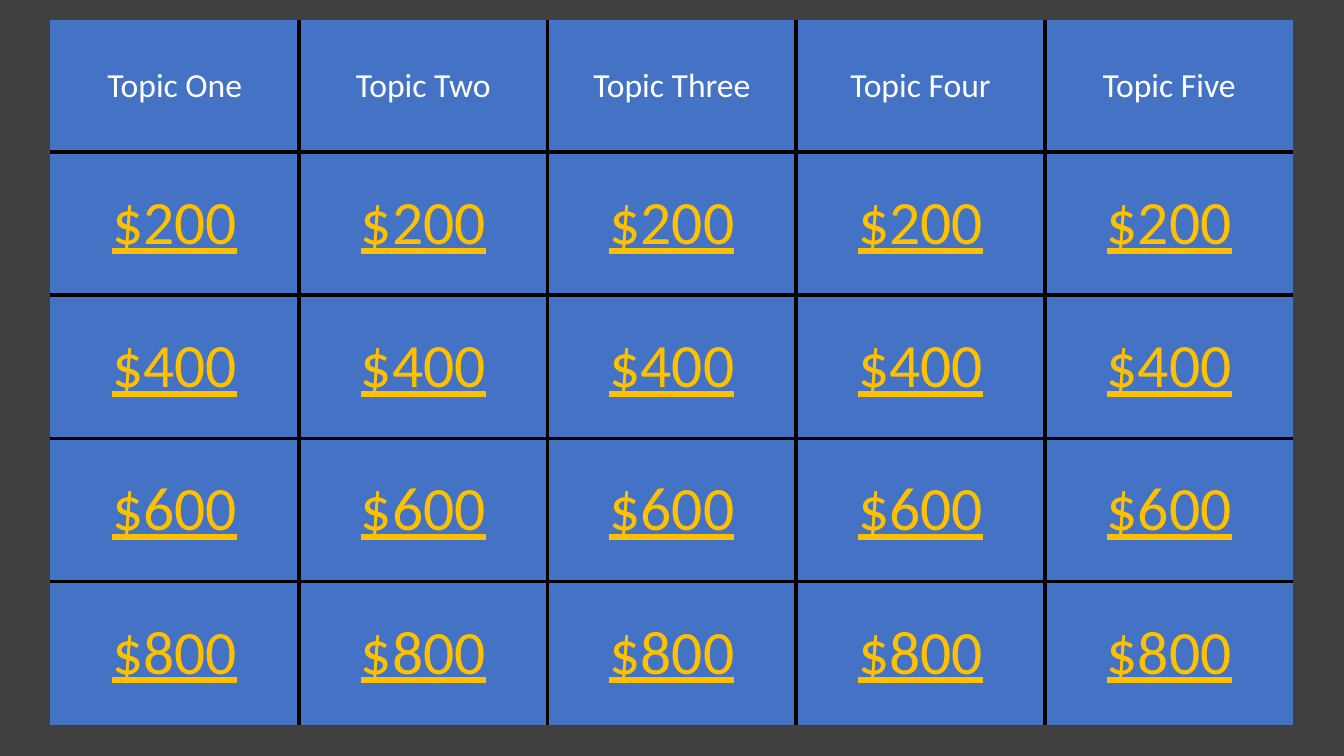
from lxml import etree
from pptx import Presentation
from pptx.dml.color import RGBColor
from pptx.enum.text import MSO_ANCHOR, PP_ALIGN
from pptx.oxml.ns import qn
from pptx.util import Inches, Pt

MIDDLE = MSO_ANCHOR.MIDDLE
CENTER = PP_ALIGN.CENTER
TOPICS = ["One", "Two", "Three", "Four", "Five"]
PRIZES = [200, 400, 600, 800]
HEAD = 1.31


def color(code):
    """Turn a hex string into a colour."""
    return RGBColor.from_string(code)


def write(frame, text, size=24, hue="FFFFFF", line=False, font="Calibri"):
    """Put one centred line of formatted text in a frame."""
    para = frame.paragraphs[0]
    para.alignment = CENTER
    run = para.add_run()
    run.text = text
    run.font.name = font
    run.font.size = Pt(size)
    run.font.color.rgb = color(hue)
    run.font.underline = line


def edge(cell, sides, hue="000000", width=3):
    """Draw the named sides of a cell and clear the others."""
    props = cell._tc.get_or_add_tcPr()
    for spot, side in enumerate("LRTB"):
        line = etree.Element(qn("a:ln" + side), w=str(Pt(width)))
        if side in sides:
            fill = etree.SubElement(line, qn("a:solidFill"))
            etree.SubElement(fill, qn("a:srgbClr"), val=hue)
        else:
            etree.SubElement(line, qn("a:noFill"))
        props.insert(spot, line)


def board(slide, left, top, width, height):
    """Build the quiz board with topics above their prizes."""
    rows, cols = len(PRIZES) + 1, len(TOPICS)
    frame = slide.shapes.add_table(
        rows, cols, Inches(left), Inches(top), Inches(width), Inches(height))
    table = frame.table
    table.horz_banding = table.first_row = False
    for col in table.columns:
        col.width = Inches(width / cols)
    for r, row in enumerate(table.rows):
        row.height = Inches((height - HEAD) / len(PRIZES) if r else HEAD)
        for c, cell in enumerate(row.cells):
            cell.fill.solid()
            cell.fill.fore_color.rgb = color("4472C4")
            cell.vertical_anchor = MIDDLE
            if r:
                cell.margin_left = cell.margin_right = 0
                cell.margin_top = cell.margin_bottom = 0
                write(cell.text_frame, f"${PRIZES[r - 1]}",
                      size=44, hue="FFC000", line=True)
            else:
                write(cell.text_frame, f"Topic {TOPICS[c]}")
            inner = {"L": c > 0, "R": c < cols - 1,
                     "T": r > 0, "B": r < rows - 1}
            edge(cell, [side for side in inner if inner[side]])


def main():
    """Make the slide and save it."""
    deck = Presentation()
    deck.slide_width, deck.slide_height = Inches(13.33), Inches(7.5)
    slide = deck.slides.add_slide(deck.slide_layouts[6])
    slide.background.fill.solid()
    slide.background.fill.fore_color.rgb = color("404040")
    board(slide, 0.5, 0.2, 12.33, 6.99)
    deck.save("out.pptx")


if __name__ == "__main__":
    main()
